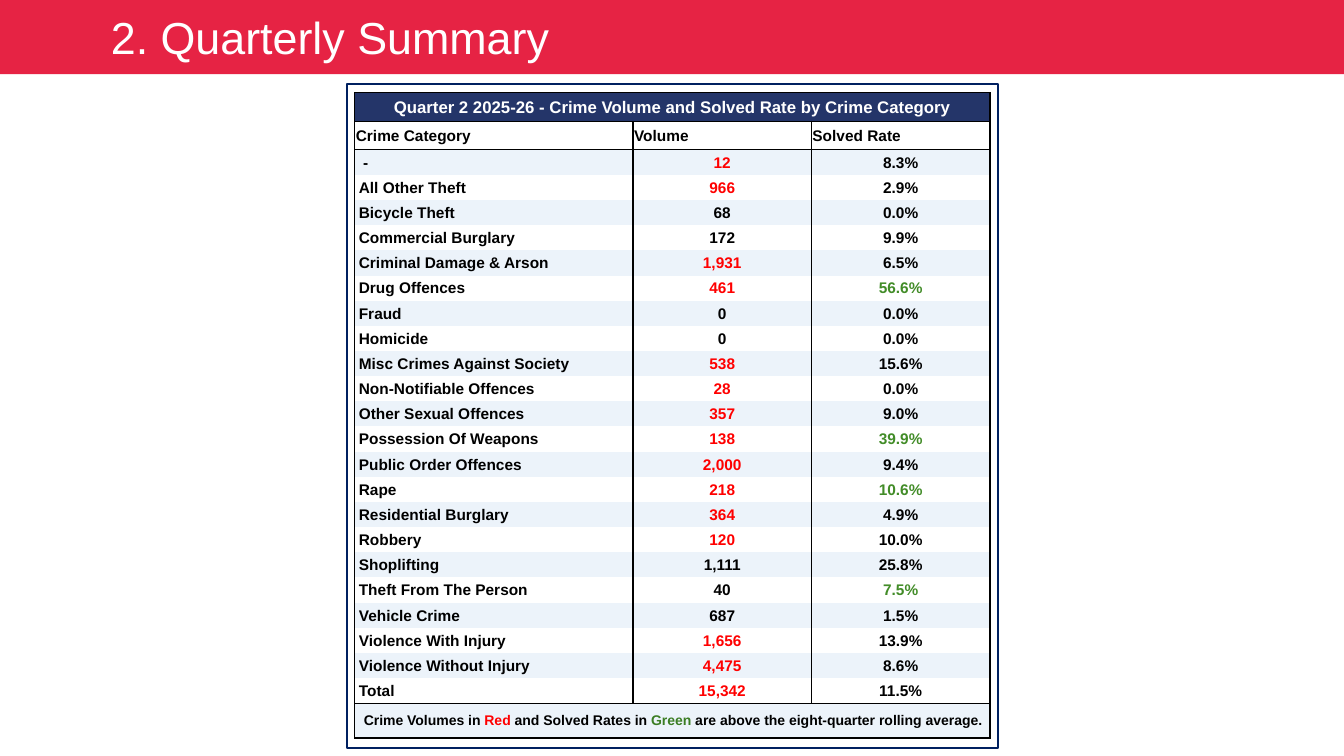
from dataclasses import dataclass

from lxml.etree import SubElement
from pptx import Presentation
from pptx.dml.color import RGBColor
from pptx.enum.shapes import MSO_SHAPE
from pptx.enum.text import MSO_ANCHOR, MSO_AUTO_SIZE, PP_ALIGN
from pptx.oxml.ns import qn
from pptx.util import Inches, Pt


@dataclass(frozen=True)
class Theme:
    font: str = "Arial"
    banner: str = "E62344"
    frame: str = "002060"
    heading: str = "243569"
    band: str = "ECF3FA"
    white: str = "FFFFFF"
    black: str = "000000"
    red: str = "FF0000"
    green: str = "428C28"
    key_green: str = "3B7D23"
    title_size: int = 32
    heading_size: int = 12
    body_size: int = 11
    note_size: int = 10
    frame_line: float = 1.25
    rule: float = 1


class SlideBuilder:
    def __init__(self, prs, theme):
        self.prs, self.theme = prs, theme
        self.s = prs.slides.add_slide(prs.slide_layouts[5])

    def x(self, percent):
        return round(self.prs.slide_width * percent / 100)

    def y(self, percent):
        return round(self.prs.slide_height * percent / 100)

    def box(self, left, top, width, height):
        return self.x(left), self.y(top), self.x(width), self.y(height)

    def style(self, r, size, color, bold=True):
        r.font.name, r.font.size, r.font.bold = self.theme.font, Pt(size), bold
        r.font.color.rgb = RGBColor.from_string(color)

    def title(self, text, height, indent):
        sp = self.s.shapes.title
        sp.left, sp.top, sp.width, sp.height = self.box(0, 0, 100, height)
        sp.fill.solid()
        sp.fill.fore_color.rgb = RGBColor.from_string(self.theme.banner)
        tf = sp.text_frame
        tf.text = text
        tf.auto_size = MSO_AUTO_SIZE.NONE
        tf.vertical_anchor = MSO_ANCHOR.MIDDLE
        tf.margin_left = self.x(indent)
        p = tf.paragraphs[0]
        p.alignment = PP_ALIGN.LEFT
        self.style(p.runs[0], self.theme.title_size, self.theme.white, False)

    def frame(self, *area):
        sp = self.s.shapes.add_shape(MSO_SHAPE.RECTANGLE, *self.box(*area))
        sp.shadow.inherit = False
        sp.fill.background()
        sp.line.color.rgb = RGBColor.from_string(self.theme.frame)
        sp.line.width = Pt(self.theme.frame_line)

    def table(self, left, top, widths, heights):
        area = self.box(left, top, sum(widths), sum(heights))
        tbl = self.s.shapes.add_table(len(heights), len(widths), *area).table
        tbl.first_row = tbl.horz_banding = False
        for col, width in zip(tbl.columns, widths):
            col.width = self.x(width)
        for row, height in zip(tbl.rows, heights):
            row.height = self.y(height)
        return tbl

    def borders(self, cell, sides):
        tc_pr = cell._tc.get_or_add_tcPr()
        for side in "LRTB":
            ln = SubElement(tc_pr, qn(f"a:ln{side}"), w=str(Pt(self.theme.rule)))
            if side in sides:
                fill = SubElement(ln, qn("a:solidFill"))
                SubElement(fill, qn("a:srgbClr"), val=self.theme.black)
            else:
                SubElement(ln, qn("a:noFill"))

    def cell(self, cell, parts, size, fill, sides="LRTB", align=PP_ALIGN.CENTER, inset=0.01):
        self.borders(cell, sides)
        cell.fill.solid()
        cell.fill.fore_color.rgb = RGBColor.from_string(fill)
        cell.vertical_anchor = MSO_ANCHOR.MIDDLE
        cell.margin_left = Inches(inset)
        cell.margin_right = cell.margin_top = Inches(0.01)
        cell.margin_bottom = 0
        p = cell.text_frame.paragraphs[0]
        p.alignment = align
        for text, color in parts:
            r = p.add_run()
            r.text = text
            self.style(r, size, color)

    def full_row(self, row, parts, size, fill, inset=0.01):
        cells = list(row.cells)
        cells[0].merge(cells[-1])
        self.cell(cells[0], parts, size, fill, inset=inset)
        for c in cells[1:]:
            self.cell(c, [], size, fill)


HEADERS = ("Crime Category", "Volume", "Solved Rate")
CRIMES = [
    (" -", "12", "8.3%", "V"),
    ("All Other Theft", "966", "2.9%", "V"),
    ("Bicycle Theft", "68", "0.0%", ""),
    ("Commercial Burglary", "172", "9.9%", ""),
    ("Criminal Damage & Arson", "1,931", "6.5%", "V"),
    ("Drug Offences", "461", "56.6%", "VS"),
    ("Fraud", "0", "0.0%", ""),
    ("Homicide", "0", "0.0%", ""),
    ("Misc Crimes Against Society", "538", "15.6%", "V"),
    ("Non-Notifiable Offences", "28", "0.0%", "V"),
    ("Other Sexual Offences", "357", "9.0%", "V"),
    ("Possession Of Weapons", "138", "39.9%", "VS"),
    ("Public Order Offences", "2,000", "9.4%", "V"),
    ("Rape", "218", "10.6%", "VS"),
    ("Residential Burglary", "364", "4.9%", "V"),
    ("Robbery", "120", "10.0%", "V"),
    ("Shoplifting", "1,111", "25.8%", ""),
    ("Theft From The Person", "40", "7.5%", "S"),
    ("Vehicle Crime", "687", "1.5%", ""),
    ("Violence With Injury", "1,656", "13.9%", "V"),
    ("Violence Without Injury", "4,475", "8.6%", "V"),
    ("Total", "15,342", "11.5%", "V"),
]


def main():
    prs = Presentation()
    prs.slide_width, prs.slide_height = Inches(13.33), Inches(7.5)
    th = Theme()
    b = SlideBuilder(prs, th)
    b.title("2. Quarterly Summary", 9.8, 8.25)
    b.frame(25.8, 11.07, 48.45, 87.9)

    heights = [3.77, 3.77] + [3.33] * len(CRIMES) + [4.6]
    tbl = b.table(26.4, 12.27, [20.7, 13.28, 13.28], heights)
    rows = list(tbl.rows)
    heading = "Quarter 2 2025-26 - Crime Volume and Solved Rate by Crime Category"
    b.full_row(rows[0], [(heading, th.white)], th.heading_size, th.heading)
    for c, text in zip(rows[1].cells, HEADERS):
        b.cell(c, [(text, th.black)], th.body_size, th.white, align=PP_ALIGN.LEFT)

    last = len(CRIMES) - 1
    for i, (category, volume, rate, above) in enumerate(CRIMES):
        fill = th.white if i % 2 else th.band
        sides = "LR" + "T" * (i == 0) + "B" * (i == last)
        name, vol, solved = rows[i + 2].cells
        b.cell(name, [(category, th.black)], th.body_size, fill, sides, PP_ALIGN.LEFT, 0.04)
        vol_color = th.red if "V" in above else th.black
        b.cell(vol, [(volume, vol_color)], th.body_size, fill, sides)
        rate_color = th.green if "S" in above else th.black
        b.cell(solved, [(rate, rate_color)], th.body_size, fill, sides)

    note = [
        ("Crime Volumes in ", th.black),
        ("Red", th.red),
        (" and Solved Rates in ", th.black),
        ("Green", th.key_green),
        (" are above the eight-quarter rolling average.", th.black),
    ]
    b.full_row(rows[-1], note, th.note_size, th.band, 0.02)
    prs.save("out.pptx")


if __name__ == "__main__":
    main()
